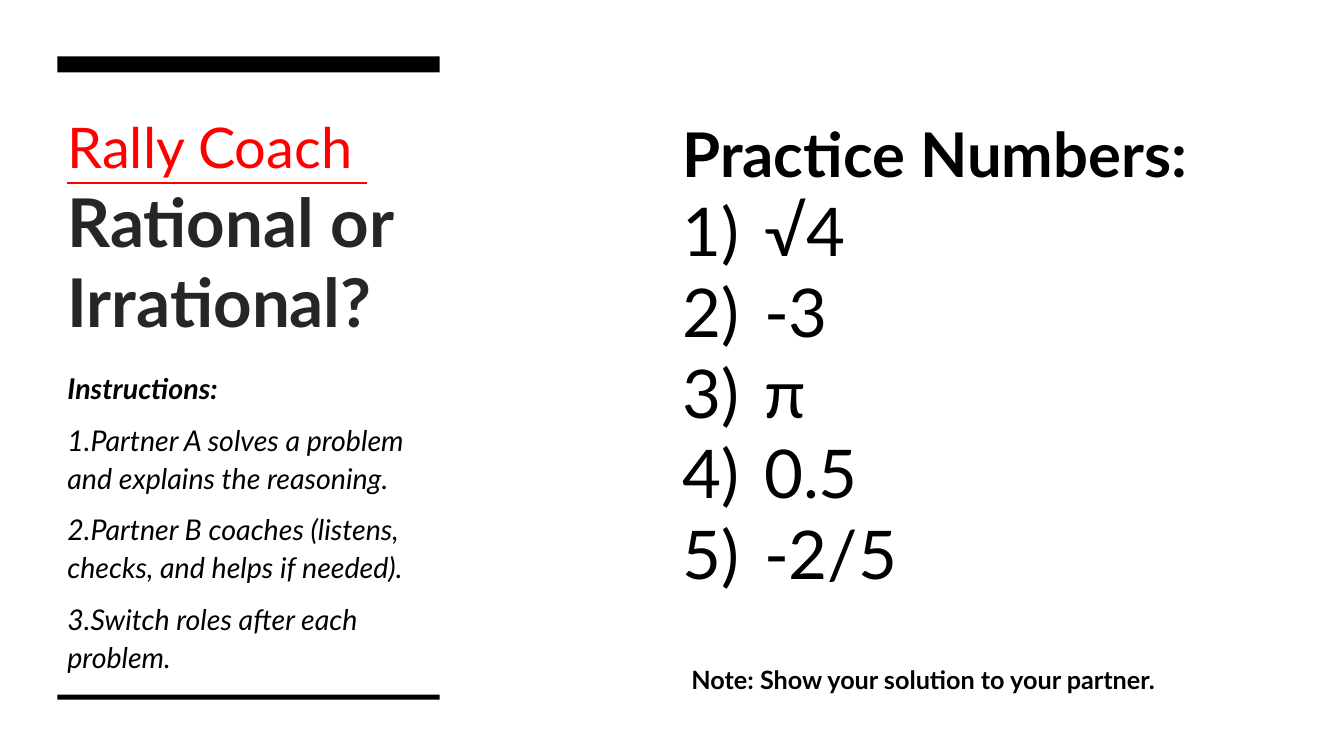
from lxml import etree
from pptx import Presentation
from pptx import util as u
from pptx.dml.color import RGBColor
from pptx.enum import shapes, text
from pptx.oxml.ns import qn

BLACK = RGBColor(0, 0, 0)
RED = RGBColor(0xFF, 0, 0)
CHARCOAL = RGBColor(0x26, 0x26, 0x26)
FONT = "Lato"
INSTRUCTIONS = [
    "Partner A solves a problem and explains the reasoning.",
    "Partner B coaches (listens, checks, and helps if needed).",
    "Switch roles after each problem.",
]
NUMBERS = ["√4", "-3", "π", "0.5", "-2/5"]


def add_box(s, left, top, width, height):
    tf = s.shapes.add_textbox(u.Inches(left), u.Inches(top),
                              u.Inches(width), u.Inches(height)).text_frame
    tf.word_wrap = True
    tf.vertical_anchor = text.MSO_ANCHOR.TOP
    return tf


def style(r, size, color=BLACK, bold=False, italic=False):
    r.font.name = FONT
    r.font.size = u.Pt(size)
    r.font.color.rgb = color
    r.font.bold = bold
    r.font.italic = italic


def number(p, kind, indent=0):
    pPr = p._p.get_or_add_pPr()
    pPr.set("marL", str(u.Inches(indent)))
    pPr.set("indent", str(-u.Inches(indent)))
    etree.SubElement(pPr, qn("a:buAutoNum")).set("type", kind)


def add_numbered(tf, heading, items, head_size, size, kind, indent=0, italic=False):
    p = tf.paragraphs[0]
    p.text = heading
    style(p.runs[0], head_size, bold=True, italic=italic)
    for item in items:
        p = tf.add_paragraph()
        p.text = item
        style(p.runs[0], size, italic=italic)
        number(p, kind, indent)


def add_bar(s, left, top, width, height):
    sp = s.shapes.add_shape(shapes.MSO_SHAPE.RECTANGLE, u.Inches(left),
                            u.Inches(top), u.Inches(width), u.Inches(height))
    sp.shadow.inherit = False
    sp.fill.solid()
    sp.fill.fore_color.rgb = BLACK
    sp.line.fill.background()


def add_activity(s, left, top, width, height):
    p = add_box(s, left, top + 0.51, width, 2.68).paragraphs[0]
    activity, question = p.add_run(), p.add_run()
    activity.text = "Rally Coach  "
    style(activity, 40, RED)
    activity.font.underline = True
    question.text = "Rational or Irrational?"
    style(question, 48, CHARCOAL, bold=True)

    tf = add_box(s, left, top + 3.04, width, 3.09)
    add_numbered(tf, "Instructions:", INSTRUCTIONS, 20.4, 20.4,
                 "arabicPeriod", italic=True)
    for p in tf.paragraphs:
        p.line_spacing = 1.1
        p.space_before = u.Pt(10)

    add_bar(s, left, top, width, 0.16)
    add_bar(s, left, top + height - 0.05, width, 0.05)


def add_practice(s, left, top, width, height):
    tf = add_box(s, left, top, width, 4.88)
    add_numbered(tf, "Practice Numbers:", NUMBERS, 44, 48, "arabicParenR", 0.81)

    tf = add_box(s, left + 0.09, top + height - 0.4, 4.97, 0.4)
    tf.text = "Note: Show your solution to your partner."
    style(tf.paragraphs[0].runs[0], 18, bold=True)


def main():
    prs = Presentation()
    prs.slide_width = u.Inches(13.33)
    prs.slide_height = u.Inches(7.5)
    s = prs.slides.add_slide(prs.slide_layouts[6])
    add_activity(s, 0.57, 0.56, 3.79, 6.38)
    add_practice(s, 6.67, 1.1, 6.1, 5.84)
    prs.save("out.pptx")


if __name__ == "__main__":
    main()
